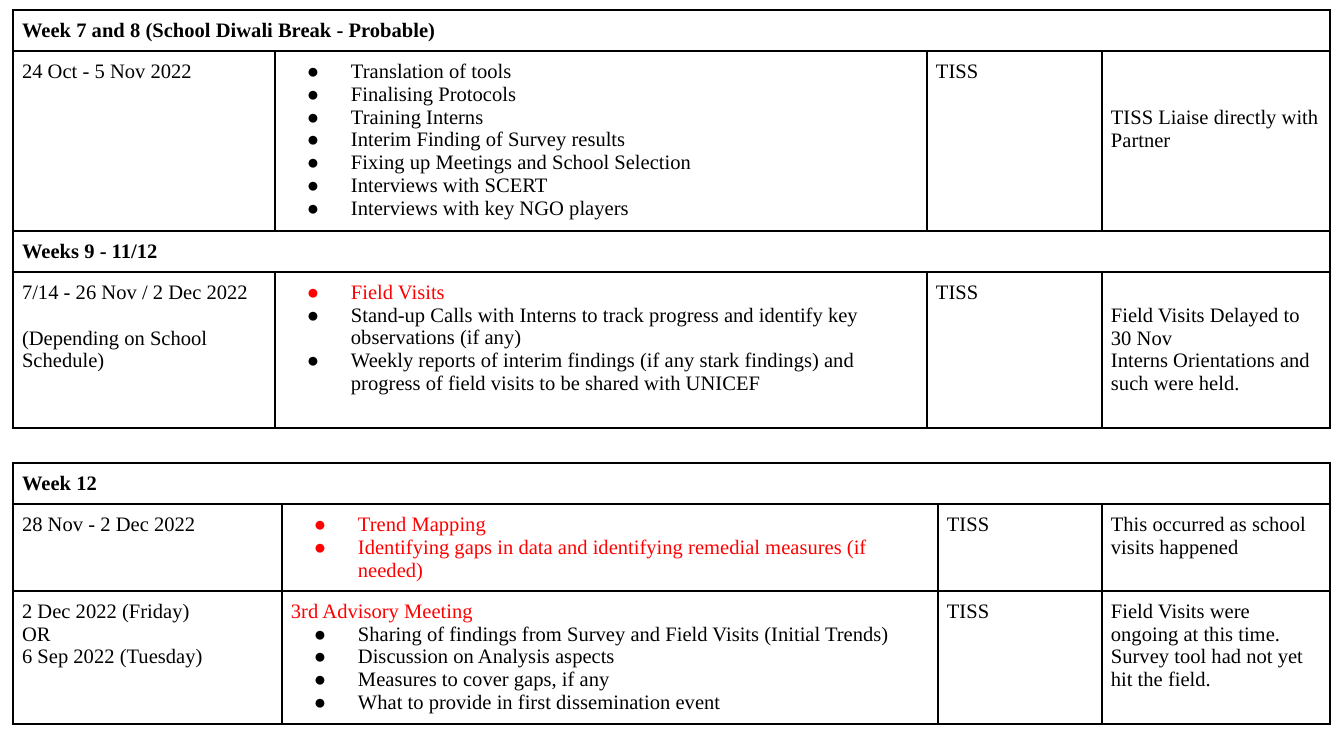
from dataclasses import dataclass

from lxml import etree
from pptx import Presentation
from pptx.dml.color import RGBColor
from pptx.enum.text import MSO_ANCHOR
from pptx.oxml.ns import qn
from pptx.util import Emu, Pt

TOP = MSO_ANCHOR.TOP
EMU_PER_PX = 914400 / 134.4


@dataclass(frozen=True)
class Theme:
    font: str = "Times New Roman"
    size: int = 11
    ink: str = "000000"
    alert: str = "FF0000"
    border: int = 1


THEME = Theme()
SLIDE_SIZE = (1344, 756)
LEFT = 13
INSET = 9
LINE = 23  # height of one text line
BULLET_INDENT, BULLET_HANG = 67, 44


def px(length):
    return Emu(round(length * EMU_PER_PX))


@dataclass(frozen=True)
class Line:
    text: str
    bullet: bool = False
    bold: bool = False
    color: str = THEME.ink
    gap: int = 0  # space before, in px


def bullets(*texts, color=THEME.ink):
    return [Line(text, bullet=True, color=color) for text in texts]


def add_color(parent, color):
    etree.SubElement(parent, qn("a:srgbClr"), val=color)


def add_bullet(para, color):
    props = para._p.get_or_add_pPr()
    props.set("marL", str(px(BULLET_INDENT)))
    props.set("indent", str(-px(BULLET_HANG)))
    add_color(etree.SubElement(props, qn("a:buClr")), color)
    etree.SubElement(props, qn("a:buFont"), typeface=THEME.font)
    etree.SubElement(props, qn("a:buChar"), char="●")


def write_lines(cell, lines, top_gap=0):
    cell.margin_top = px(INSET + top_gap)
    frame = cell.text_frame
    for index, line in enumerate(lines):
        para = frame.add_paragraph() if index else frame.paragraphs[0]
        para.text = line.text
        if line.bullet:
            add_bullet(para, line.color)
        if line.gap:
            para.space_before = px(line.gap)
        para.font.name = THEME.font
        para.font.size = Pt(THEME.size)
        para.font.bold = line.bold
        para.font.color.rgb = RGBColor.from_string(line.color)


def style_cell(cell):
    cell.margin_left = cell.margin_right = px(INSET)
    cell.margin_top = cell.margin_bottom = px(INSET)
    cell.vertical_anchor = TOP
    props = cell._tc.get_or_add_tcPr()
    for side in ("a:lnL", "a:lnR", "a:lnT", "a:lnB"):
        edge = etree.SubElement(props, qn(side), w=str(Pt(THEME.border)))
        add_color(etree.SubElement(edge, qn("a:solidFill")), THEME.ink)
    cell.fill.background()


def add_schedule(page, top, widths, heights, rows):
    """Draw a table; a row given as a plain string is a week heading."""
    table = page.shapes.add_table(
        len(heights), len(widths), px(LEFT), px(top),
        px(sum(widths)), px(sum(heights))).table
    table.first_row = table.horz_banding = False
    for column, width in zip(table.columns, widths):
        column.width = px(width)
    for row, height in zip(table.rows, heights):
        row.height = px(height)
    for cell in table.iter_cells():
        style_cell(cell)

    for index, row in enumerate(rows):
        if isinstance(row, str):
            heading = table.cell(index, 0)
            heading.merge(table.cell(index, len(widths) - 1))
            write_lines(heading, [Line(row, bold=True)])
            continue
        dates, tasks, owner, remarks, remark_gap = row
        write_lines(table.cell(index, 0), dates)
        write_lines(table.cell(index, 1), tasks)
        write_lines(table.cell(index, 2), [Line(owner)])
        write_lines(table.cell(index, 3), remarks, remark_gap)


BREAK_AND_VISITS = [
    "Week 7 and 8 (School Diwali Break - Probable)",
    (
        [Line("24 Oct - 5 Nov 2022")],
        bullets(
            "Translation of tools",
            "Finalising Protocols",
            "Training Interns",
            "Interim Finding of Survey results",
            "Fixing up Meetings and School Selection",
            "Interviews with SCERT",
            "Interviews with key NGO players",
        ),
        "TISS",
        [Line("TISS Liaise directly with Partner")],
        2 * LINE,
    ),
    "Weeks 9 - 11/12",
    (
        [Line("7/14 - 26 Nov / 2 Dec 2022"),
         Line("(Depending on School Schedule)", gap=LINE)],
        bullets("Field Visits", color=THEME.alert) + bullets(
            "Stand-up Calls with Interns to track progress and identify key "
            "observations (if any)",
            "Weekly reports of interim findings (if any stark findings) and "
            "progress of field visits to be shared with UNICEF",
        ),
        "TISS",
        [Line("Field Visits Delayed to 30 Nov"),
         Line("Interns Orientations and such were held.")],
        LINE,
    ),
]

MAPPING_AND_MEETING = [
    "Week 12",
    (
        [Line("28 Nov - 2 Dec 2022")],
        bullets(
            "Trend Mapping",
            "Identifying gaps in data and identifying remedial measures "
            "(if needed)",
            color=THEME.alert,
        ),
        "TISS",
        [Line("This occurred as school visits happened")],
        0,
    ),
    (
        [Line("2 Dec 2022 (Friday)"), Line("OR"),
         Line("6 Sep 2022 (Tuesday)")],
        [Line("3rd Advisory Meeting", color=THEME.alert)] + bullets(
            "Sharing of findings from Survey and Field Visits (Initial Trends)",
            "Discussion on Analysis aspects",
            "Measures to cover gaps, if any",
            "What to provide in first dissemination event",
        ),
        "TISS",
        [Line("Field Visits were ongoing at this time. Survey tool had not "
              "yet hit the field.")],
        0,
    ),
]


def main():
    deck = Presentation()
    deck.slide_width, deck.slide_height = map(px, SLIDE_SIZE)
    page = deck.slides.add_slide(deck.slide_layouts[6])

    # Weeks 7 to 11/12
    add_schedule(page, 10, (262, 652, 175, 228), (41, 180, 41, 156),
                 BREAK_AND_VISITS)
    # Week 12
    add_schedule(page, 463, (269, 656, 164, 228), (41, 87, 133),
                 MAPPING_AND_MEETING)
    deck.save("out.pptx")


if __name__ == "__main__":
    main()
